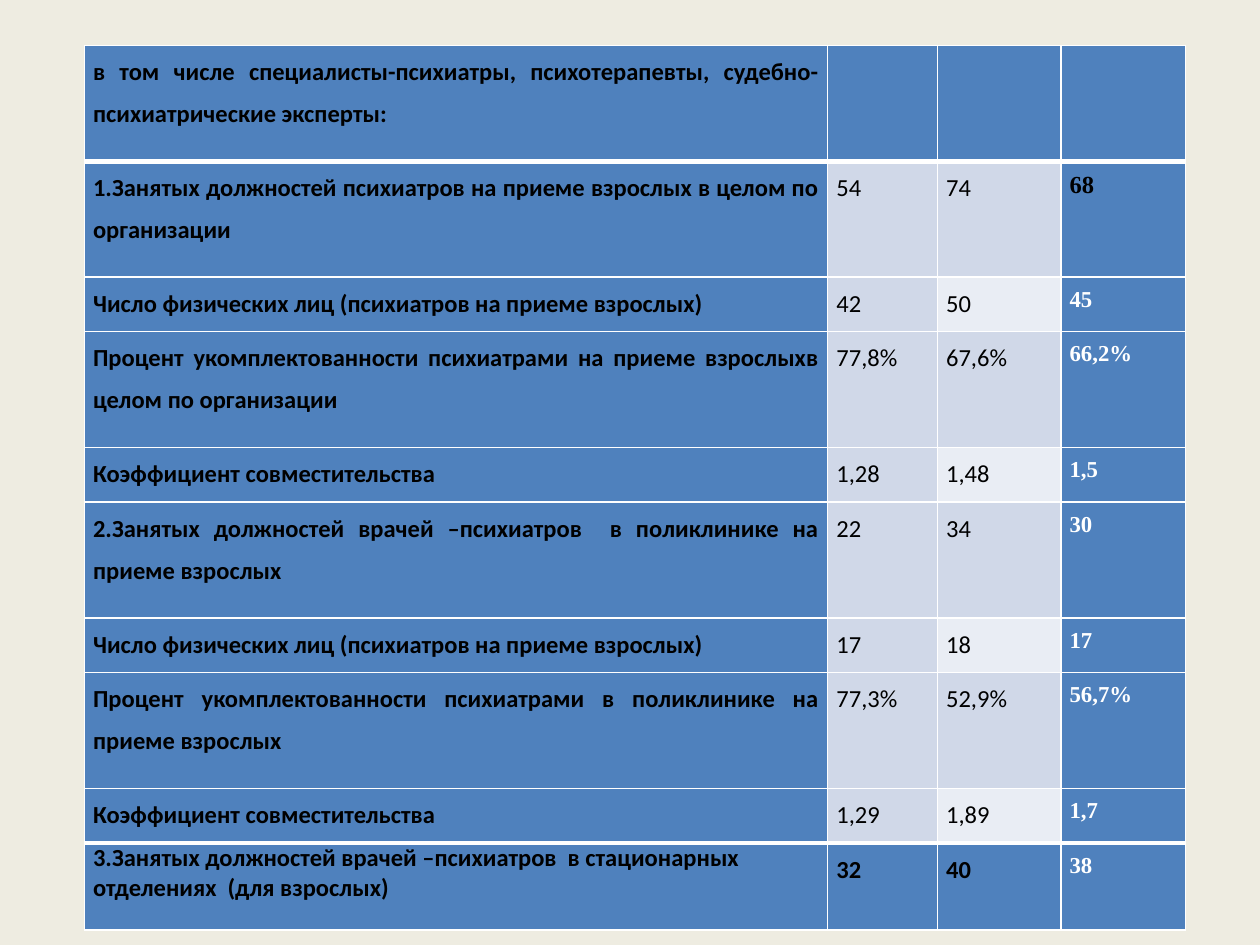
import pptx
import pptx.dml.color
import pptx.enum.text
import pptx.oxml
import pptx.oxml.ns
import pptx.util

Pt = pptx.util.Pt

BLUE, PALE, PALER = "4F81BD", "D0D8E8", "E9EDF4"
BLACK, WHITE, CREAM = "000000", "FFFFFF", "EEECE1"

COLUMN_WIDTHS = [424.8, 62.7, 70.6, 71.2]
TALL, SHORT, LAST = 66.2, 31.2, 49.7
THIN, HEAVY = 1, 3

STAFFING = [
    ("в том числе специалисты-психиатры, психотерапевты, судебно-психиатрические эксперты:", "", "", ""),
    ("1.Занятых должностей психиатров на приеме взрослых в целом по организации", "54", "74", "68"),
    ("Число физических лиц (психиатров на приеме взрослых)", "42", "50", "45"),
    ("Процент укомплектованности психиатрами на приеме взрослыхв целом по организации",
     "77,8%", "67,6%", "66,2%"),
    ("Коэффициент совместительства", "1,28", "1,48", "1,5"),
    ("2.Занятых должностей врачей –психиатров  в поликлинике на приеме взрослых", "22", "34", "30"),
    ("Число физических лиц (психиатров на приеме взрослых)", "17", "18", "17"),
    ("Процент укомплектованности психиатрами в поликлинике на приеме взрослых",
     "77,3%", "52,9%", "56,7%"),
    ("Коэффициент совместительства", "1,29", "1,89", "1,7"),
    ("3.Занятых должностей врачей –психиатров  в стационарных отделениях  (для взрослых)",
     "32", "40", "38"),
]
LAST_ROW = len(STAFFING) - 1
LAST_COLUMN = len(COLUMN_WIDTHS) - 1


def paint(fill, color):
    fill.solid()
    fill.fore_color.rgb = pptx.dml.color.RGBColor.from_string(color)


def set_borders(cell, top, bottom):
    properties = cell._tc.get_or_add_tcPr()
    for side, width in (("L", THIN), ("R", THIN), ("T", top), ("B", bottom)):
        properties.append(pptx.oxml.parse_xml(
            f'<a:ln{side} {pptx.oxml.ns.nsdecls("a")} w="{Pt(width)}">'
            f'<a:solidFill><a:srgbClr val="{WHITE}"/></a:solidFill></a:ln{side}>'))


def cell_fill(row, column):
    # Outer columns and the first and last rows are blue
    if column in (0, LAST_COLUMN) or row in (0, LAST_ROW):
        return BLUE
    # Short rows are lighter in the second figure column
    return PALER if column == 2 and row % 2 == 0 else PALE


def write_cell(cell, text, row, column):
    cell.margin_left = cell.margin_right = Pt(5)
    cell.margin_top = cell.margin_bottom = 0
    paragraph = cell.text_frame.paragraphs[0]
    paragraph.text = text
    if (row, column) != (LAST_ROW, 0):
        paragraph.alignment = pptx.enum.text.PP_ALIGN.JUSTIFY
        paragraph.line_spacing = 1.4
    is_total = column == LAST_COLUMN
    is_white = is_total and row > 1
    font = paragraph.font
    font.name = "Times New Roman" if is_total else "Calibri"
    font.size = Pt(13 if is_white else 14)
    font.bold = column in (0, LAST_COLUMN) or row == LAST_ROW
    paint(font.fill, WHITE if is_white else BLACK)


def add_staffing_table(slide, left, top, width, height):
    table = slide.shapes.add_table(
        len(STAFFING), len(COLUMN_WIDTHS), Pt(left), Pt(top), Pt(width), Pt(height)).table
    for column, column_width in zip(table.columns, COLUMN_WIDTHS):
        column.width = Pt(column_width)
    for row, texts in enumerate(STAFFING):
        # Headings and percentages take two lines, the rows between take one
        is_tall = row == 0 or row % 2 == 1
        table.rows[row].height = Pt(LAST if row == LAST_ROW else TALL if is_tall else SHORT)
        # Heavy rules follow the first row and precede the last
        top_rule = HEAVY if row in (1, LAST_ROW) else THIN
        bottom_rule = HEAVY if row in (0, LAST_ROW - 1) else THIN
        for column, text in enumerate(texts):
            cell = table.cell(row, column)
            set_borders(cell, top_rule, bottom_rule)
            paint(cell.fill, cell_fill(row, column))
            write_cell(cell, text, row, column)


def main():
    presentation = pptx.Presentation()
    presentation.slide_width, presentation.slide_height = Pt(720), Pt(540)
    slide = presentation.slides.add_slide(presentation.slide_layouts[6])
    paint(slide.background.fill, CREAM)
    add_staffing_table(slide, 48.2, 26, sum(COLUMN_WIDTHS), 504.7)
    presentation.save("out.pptx")


if __name__ == "__main__":
    main()
